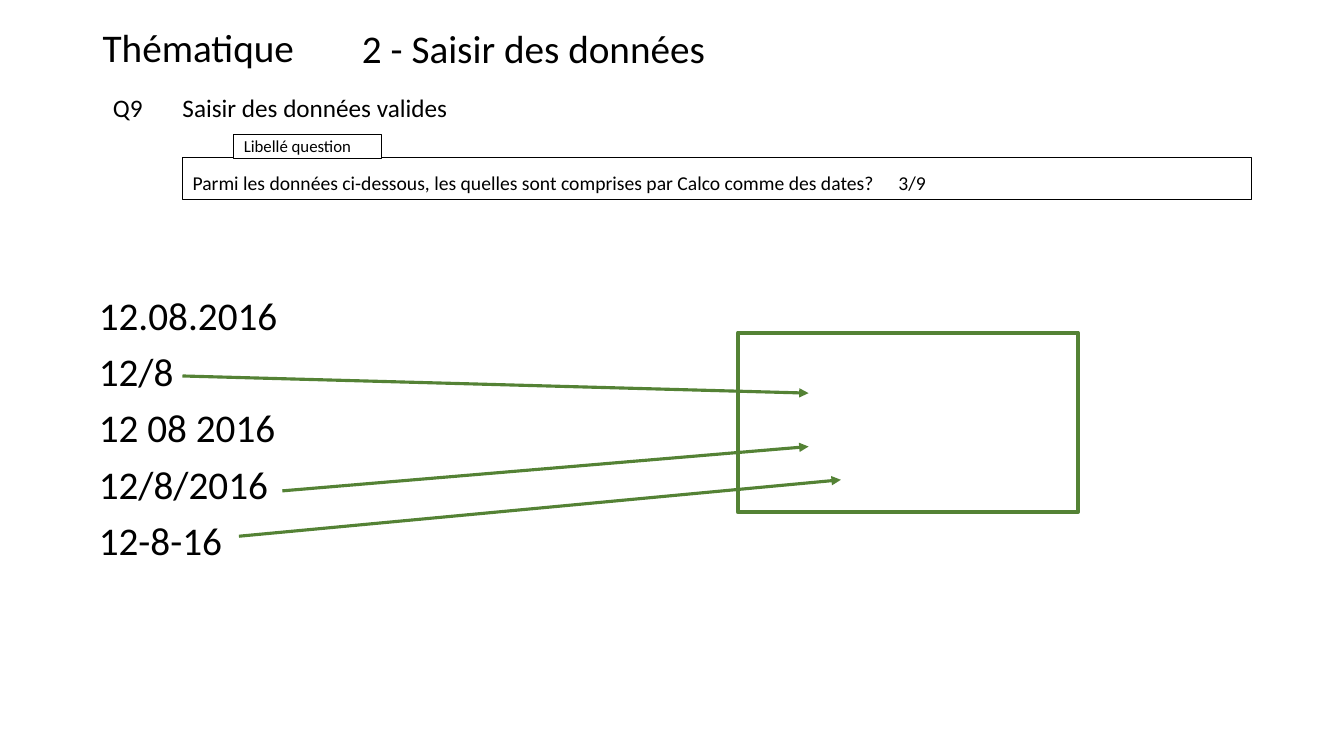
from dataclasses import dataclass

from lxml.etree import SubElement
from pptx import Presentation
from pptx.dml.color import RGBColor
from pptx.enum.shapes import MSO_CONNECTOR, MSO_SHAPE
from pptx.enum.text import MSO_ANCHOR, MSO_AUTO_SIZE, PP_ALIGN
from pptx.oxml.ns import qn
from pptx.util import Inches, Pt


@dataclass(frozen=True)
class Theme:
    font: str = "Calibri"
    ink: RGBColor = RGBColor(0x00, 0x00, 0x00)
    paper: RGBColor = RGBColor(0xFF, 0xFF, 0xFF)
    accent: RGBColor = RGBColor(0x54, 0x82, 0x35)
    large: Pt = Pt(28)
    medium: Pt = Pt(18)
    body: Pt = Pt(14)
    small: Pt = Pt(12)
    thin: Pt = Pt(0.75)
    arrow: Pt = Pt(2.25)
    thick: Pt = Pt(3)


def apply(target, values):
    for name, value in values.items():
        setattr(target, name, value)


class QuizSlide:
    def __init__(self, slide, theme):
        self.slide = slide
        self.theme = theme

    def set_text(self, shape, lines, size, anchor, spacing=None, margins=None):
        frame = shape.text_frame
        apply(frame, {"word_wrap": True, "auto_size": MSO_AUTO_SIZE.NONE,
                      "vertical_anchor": anchor, **(margins or {})})
        frame.text = "\n".join(lines)
        for paragraph in frame.paragraphs:
            apply(paragraph, {"alignment": PP_ALIGN.LEFT, **(spacing or {})})
            apply(paragraph.font, {"name": self.theme.font, "size": size, "bold": False})
            paragraph.font.color.rgb = self.theme.ink

    def outline(self, shape, color, width):
        shape.line.color.rgb = color
        shape.line.width = width

    def placeholder(self, index, box, lines, size, anchor=MSO_ANCHOR.MIDDLE):
        holder = self.slide.placeholders[index]
        apply(holder, dict(zip(("left", "top", "width", "height"), map(Inches, box))))
        before = Pt(0) if index == 0 else Pt(10)
        self.set_text(holder, lines, size, anchor,
                      {"line_spacing": 0.9, "space_before": before})
        # Plain lines without bullets or hanging indent
        for paragraph in holder.text_frame.paragraphs:
            properties = paragraph._p.get_or_add_pPr()
            properties.set("marL", "0")
            properties.set("indent", "0")
            SubElement(properties, qn("a:buNone"))
        return holder

    def text(self, box, line, size):
        label = self.slide.shapes.add_textbox(*map(Inches, box))
        self.set_text(label, [line], size, MSO_ANCHOR.MIDDLE)

    def rectangle(self, box, color, width, fill=None):
        frame = self.slide.shapes.add_shape(MSO_SHAPE.RECTANGLE, *map(Inches, box))
        frame.shadow.inherit = False
        if fill is None:
            frame.fill.background()
        else:
            frame.fill.solid()
            frame.fill.fore_color.rgb = fill
        self.outline(frame, color, width)
        return frame

    def arrow(self, start, end):
        link = self.slide.shapes.add_connector(
            MSO_CONNECTOR.STRAIGHT, *map(Inches, start + end))
        self.outline(link, self.theme.accent, self.theme.arrow)
        properties = link._element.spPr
        SubElement(properties.find(qn("a:ln")), qn("a:tailEnd"), type="triangle")
        SubElement(properties, qn("a:effectLst"))


def main():
    theme = Theme()
    presentation = Presentation()
    apply(presentation, {"slide_width": Inches(13.33), "slide_height": Inches(7.5)})
    # Comparison layout: a title and four bodies
    quiz = QuizSlide(presentation.slides.add_slide(presentation.slide_layouts[4]), theme)

    # Theme and question headings
    quiz.text((0.92, 0.18, 2.27, 0.57), "Thématique", theme.large)
    quiz.placeholder(0, (3.49, 0.14, 8.93, 0.73), ["2 - Saisir des données"], theme.large)
    quiz.placeholder(1, (1.02, 0.87, 0.68, 0.42), ["Q9"], theme.medium)
    quiz.placeholder(3, (1.71, 0.87, 10.71, 0.42),
                     ["Saisir des données valides"], theme.medium)

    # Question with its label
    question = quiz.placeholder(
        4, (1.81, 1.56, 10.6, 0.42),
        ["Parmi les données ci-dessous, les quelles sont comprises par Calco "
         "comme des dates?\t3/9"], theme.body, MSO_ANCHOR.BOTTOM)
    quiz.outline(question, theme.ink, theme.thin)
    question_label = quiz.rectangle((2.32, 1.33, 1.46, 0.24),
                                    theme.ink, theme.thin, theme.paper)
    quiz.set_text(question_label, ["Libellé question"], theme.small, MSO_ANCHOR.TOP,
                  margins={"margin_top": Inches(0.02), "margin_bottom": Inches(0.05)})

    # Candidate dates
    quiz.placeholder(2, (0.88, 2.89, 4.63, 3.34),
                     ["12.08.2016", "12/8", "12 08 2016", "12/8/2016", "12-8-16"],
                     theme.large, MSO_ANCHOR.TOP)

    # Answer box and the arrows of valid dates
    quiz.rectangle((7.32, 3.3, 3.37, 1.78), theme.accent, theme.thick)
    for start, end in (((1.81, 3.73), (8.02, 3.9)),
                       ((2.8, 4.87), (8.02, 4.43)),
                       ((2.37, 5.32), (8.34, 4.76))):
        quiz.arrow(start, end)

    presentation.save("out.pptx")


if __name__ == "__main__":
    main()
